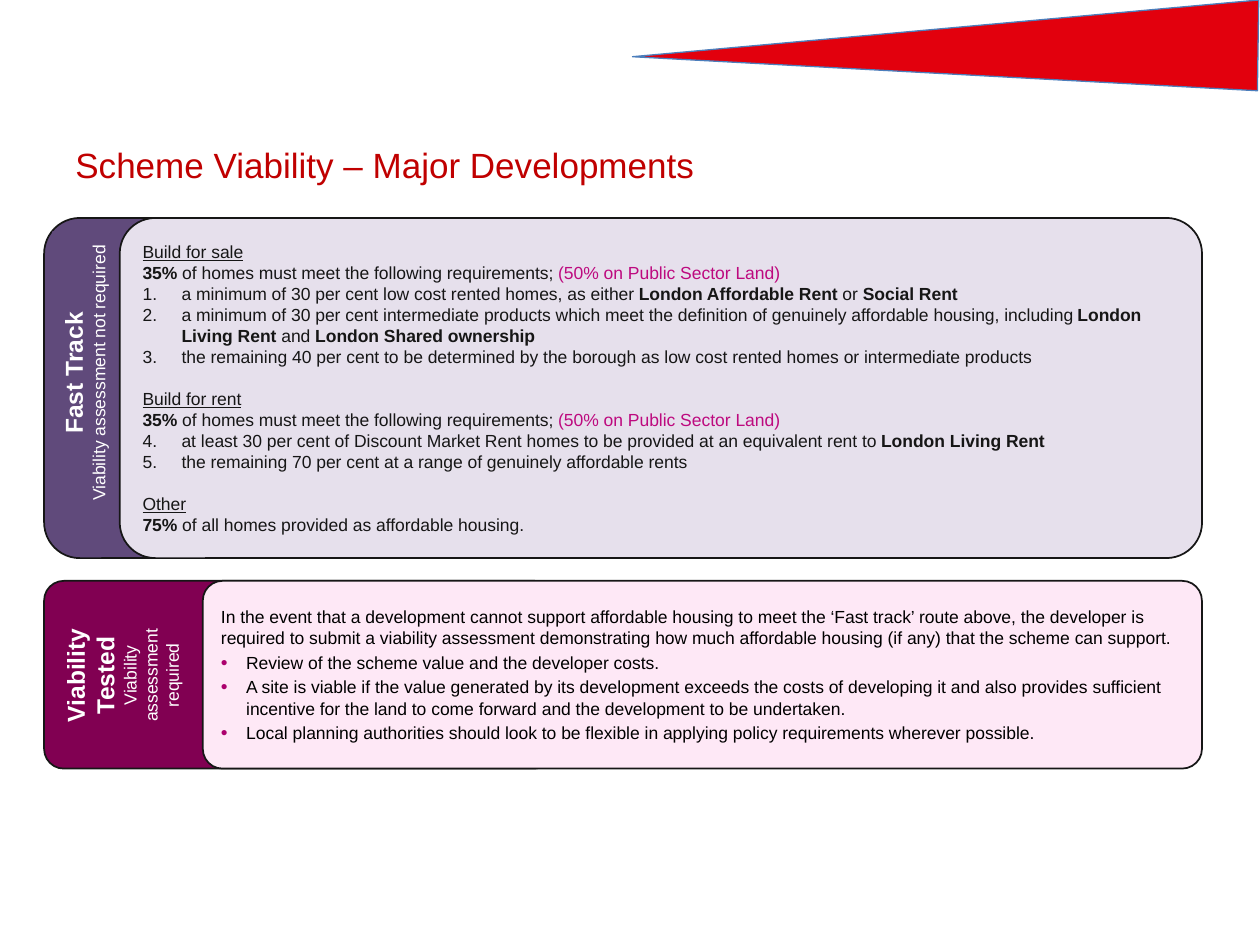
import pptx
import pptx.dml.color
import pptx.enum.shapes
import pptx.enum.text
import pptx.oxml.ns
import pptx.util
from lxml import etree
from pptx.util import Inches

ANCHOR = pptx.enum.text.MSO_ANCHOR
ALIGN = pptx.enum.text.PP_ALIGN
INK = "161616"
FAST_DARK, FAST_LIGHT = "604A7B", "E6E0EC"
TESTED_DARK, TESTED_LIGHT = "810052", "FEE8F6"
PANEL_LEFT, PANEL_RIGHT = 0.35, 9.54


def rgb(value):
    return pptx.dml.color.RGBColor.from_string(value)


def paint(shape, fill, line=None, width=1):
    shape.shadow.inherit = False
    shape.fill.solid()
    shape.fill.fore_color.rgb = rgb(fill)
    if line:
        shape.line.color.rgb = rgb(line)
        shape.line.width = pptx.util.Pt(width)


def add_mark(paragraph, tag, **attributes):
    properties = paragraph._p.get_or_add_pPr()
    mark = etree.SubElement(properties, pptx.oxml.ns.qn(tag))
    for name, value in attributes.items():
        mark.set(name, str(value))
    return mark


def hang(paragraph, indent):
    properties = paragraph._p.get_or_add_pPr()
    properties.set("marL", str(Inches(indent)))
    properties.set("indent", str(-Inches(indent)))


def number(paragraph, start):
    hang(paragraph, 0.31)
    add_mark(paragraph, "a:buFont", typeface="+mj-lt")
    add_mark(paragraph, "a:buAutoNum", type="arabicPeriod", startAt=start)


def bullet(paragraph):
    hang(paragraph, 0.2)
    colour = add_mark(paragraph, "a:buClr")
    etree.SubElement(colour, pptx.oxml.ns.qn("a:srgbClr")).set("val", "AC006D")
    add_mark(paragraph, "a:buSzPct", val=110000)
    add_mark(paragraph, "a:buFont", typeface="Arial")
    add_mark(paragraph, "a:buChar", char="•")


def write(paragraph, text, size=10, color=INK, bold=False, underline=False,
          align=ALIGN.LEFT, before=0):
    paragraph.alignment = align
    paragraph.space_before = pptx.util.Pt(before)
    run = paragraph.add_run()
    run.text = text
    run.font.name = "Arial"
    run.font.size = pptx.util.Pt(size)
    run.font.color.rgb = rgb(color)
    run.font.bold = bold
    run.font.underline = underline


def next_paragraph(frame):
    first = frame.paragraphs[0]
    return frame.add_paragraph() if first.runs else first


def write_mixed(paragraph, *parts):
    for index, text in enumerate(parts):
        if text:
            write(paragraph, text, bold=index % 2 == 1)


def add_panel(slide, left, top, right, height, fill):
    panel = slide.shapes.add_shape(
        pptx.enum.shapes.MSO_SHAPE.ROUNDED_RECTANGLE,
        Inches(left), Inches(top), Inches(right - left), Inches(height))
    panel.adjustments[0] = 0.105
    paint(panel, fill, INK)
    panel.text_frame.word_wrap = True
    panel.text_frame.vertical_anchor = ANCHOR.MIDDLE
    return panel.text_frame


def add_route(slide, top, height, body_left, dark, light):
    add_panel(slide, PANEL_LEFT, top, 4.4, height, dark)
    return add_panel(slide, body_left, top, PANEL_RIGHT, height, light)


def add_side_label(slide, left, top, width, height, fill, heading, note):
    label = slide.shapes.add_textbox(
        Inches(left), Inches(top), Inches(width), Inches(height))
    label.rotation = 270
    paint(label, fill)
    frame = label.text_frame
    frame.word_wrap = False
    frame.auto_size = pptx.enum.text.MSO_AUTO_SIZE.SHAPE_TO_FIT_TEXT
    for lines, size, bold in ((heading, 14, True), (note, 10, False)):
        for line in lines:
            write(next_paragraph(frame), line, size=size, color="FFFFFF",
                  bold=bold, align=ALIGN.CENTER)


def add_tenure(frame, heading, share, requirement, land="", items=(), start=1, before=0):
    write(next_paragraph(frame), heading, underline=True, before=before)
    target = next_paragraph(frame)
    write_mixed(target, "", share, requirement)
    if land:
        write(target, land, color="BD0A7F")
    for parts in items:
        item = next_paragraph(frame)
        number(item, start)
        write_mixed(item, *parts)


def add_banner(slide):
    tip, *corners = [(Inches(x), Inches(y))
                     for x, y in ((5.02, 0.45), (9.99, 0), (9.98, 0.72))]
    outline = slide.shapes.build_freeform(*tip)
    outline.add_line_segments(corners, close=True)
    paint(outline.convert_to_shape(), "E2000D", "4B7EBC", 0.75)


def add_title(slide, text):
    title = slide.shapes.add_textbox(
        Inches(0.5), Inches(1.07), Inches(9.13), Inches(0.47)).text_frame
    title.word_wrap = True
    title.vertical_anchor = ANCHOR.MIDDLE
    write(title.paragraphs[0], text, size=20, color="C00000")


def add_fast_track(slide):
    body = add_route(slide, 1.73, 2.7, 0.95, FAST_DARK, FAST_LIGHT)
    requirement = " of homes must meet the following requirements; "
    land = "(50% on Public Sector Land)"
    add_tenure(body, "Build for sale", "35%", requirement, land, [
        ("a minimum of 30 per cent low cost rented homes, as either ",
         "London Affordable Rent ", "or ", "Social Rent"),
        ("a minimum of 30 per cent intermediate products which meet the definition "
         "of genuinely affordable housing, including ",
         "London Living Rent ", "and ", "London Shared ownership"),
        ("the remaining 40 per cent to be determined by the borough as low cost "
         "rented homes or intermediate products",),
    ])
    add_tenure(body, "Build for rent", "35%", requirement, land, [
        ("at least 30 per cent of Discount Market Rent homes to be provided at an "
         "equivalent rent to ", "London Living Rent"),
        ("the remaining 70 per cent at a range of genuinely affordable rents",),
    ], start=4, before=12)
    add_tenure(body, "Other", "75%", " of all homes provided as affordable housing.",
               before=12)
    add_side_label(slide, -0.46, 2.71, 2.25, 0.5, FAST_DARK,
                   ["Fast Track"], ["Viability assessment not required"])


def add_viability_tested(slide):
    body = add_route(slide, 4.61, 1.49, 1.61, TESTED_DARK, TESTED_LIGHT)
    write(body.paragraphs[0],
          "In the event that a development cannot support affordable housing to meet "
          "the ‘Fast track’ route above, the developer is required to submit a viability "
          "assessment demonstrating how much affordable housing (if any) that the scheme "
          "can support.", color="000000")
    for point in (
        "Review of the scheme value and the developer costs.",
        "A site is viable if the value generated by its development exceeds the costs of "
        "developing it and also provides sufficient incentive for the land to come forward "
        "and the development to be undertaken.",
        "Local planning authorities should look to be flexible in applying policy "
        "requirements wherever possible.",
    ):
        paragraph = next_paragraph(body)
        bullet(paragraph)
        write(paragraph, point, color="000000", before=2)
    add_side_label(slide, 0.47, 4.82, 1, 1.08, TESTED_DARK,
                   ["Viability", "Tested"], ["Viability", "assessment", "required"])


def main():
    deck = pptx.Presentation()
    deck.slide_width, deck.slide_height = Inches(10), Inches(7.5)
    slide = deck.slides.add_slide(deck.slide_layouts[6])
    add_banner(slide)
    add_title(slide, "Scheme Viability – Major Developments")
    add_fast_track(slide)
    add_viability_tested(slide)
    deck.save("out.pptx")


if __name__ == "__main__":
    main()
